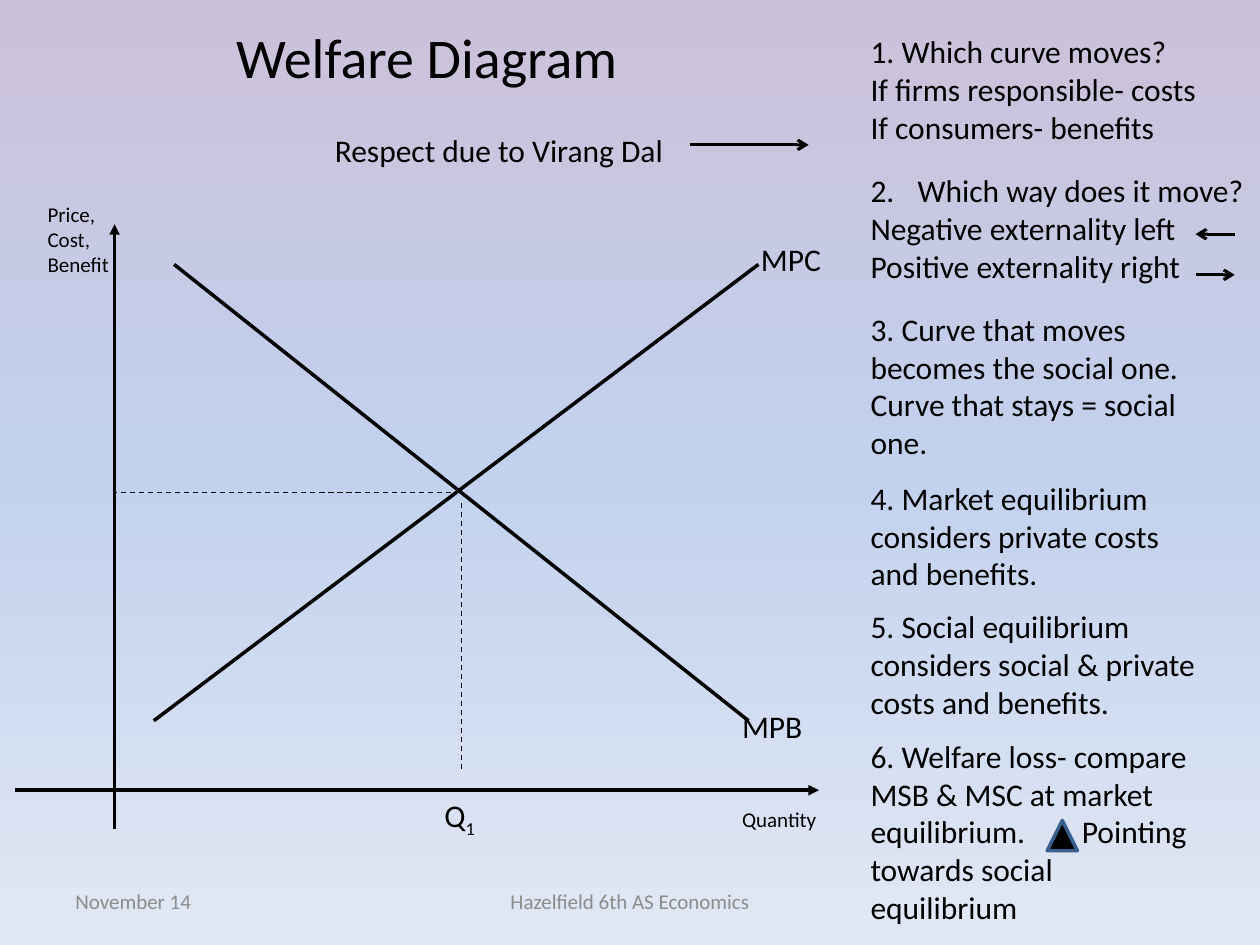
from copy import deepcopy

from lxml import etree
from pptx import Presentation
from pptx import util as u
from pptx.dml.color import RGBColor
from pptx.enum import dml, shapes, text
from pptx.oxml.ns import qn

BLACK, GREY = "000000", "8C8C8C"


def color(value):
    return RGBColor.from_string(value)


def add_text(page, box, lines, size=18, ink=BLACK, align=text.PP_ALIGN.LEFT,
             anchor=text.MSO_ANCHOR.TOP, wrap=True):
    """Put one paragraph per line in a box given in cm; return its frame."""
    frame = page.shapes.add_textbox(*map(u.Cm, box)).text_frame
    frame.word_wrap = wrap
    frame.vertical_anchor = anchor
    for number, line in enumerate(lines):
        para = frame.add_paragraph() if number else frame.paragraphs[0]
        para.alignment = align
        add_span(para, line, size, ink)
    return frame


def add_span(para, words, size=18, ink=BLACK):
    span = para.add_run()
    span.text = words
    span.font.name = "Calibri"
    span.font.size = u.Pt(size)
    span.font.color.rgb = color(ink)
    return span


def add_line(page, origin, start, end, width=2, arrow=None, dashed=False):
    """Draw a straight line between two points relative to origin."""
    points = [u.Cm(origin[axis] + point[axis])
              for point in (start, end) for axis in (0, 1)]
    line = page.shapes.add_connector(shapes.MSO_CONNECTOR.STRAIGHT, *points)
    line.line.width = u.Pt(width)
    line.line.color.rgb = color(BLACK)
    if dashed:
        line.line.dash_style = dml.MSO_LINE.DASH
    if arrow:
        stroke = line.line._get_or_add_ln()
        etree.SubElement(stroke, qn("a:tailEnd"), type=arrow)
    etree.SubElement(line._element.spPr, qn("a:effectLst"))


def paint_background(page):
    fill = page.background.fill
    fill.gradient()
    fill.gradient_angle = 270
    first = next(page._element.iter(qn("a:gs")))
    first.addnext(deepcopy(first))
    stops = ((0, "CCC1DA"), (0.5, "C2D1ED"), (1, "E1E8F5"))
    for stop, (position, tint) in zip(fill.gradient_stops, stops):
        stop.position = position
        stop.color.rgb = color(tint)


def add_header(page, box):
    left, top, width, height = box
    add_text(page, (left, top, 13.41, 1.62), ["Welfare Diagram"], size=32,
             align=text.PP_ALIGN.CENTER)
    add_text(page, (left + 4.6, top + 2.18, 10.31, 1.02),
             ["Respect due to Virang Dal"])
    add_line(page, box, (12, 2.59), (14.4, 2.59), 1.75, "arrow")


def add_diagram(page, box):
    left, top, width, height = box
    axis_x, axis_y = 2.01, 12.03
    upper, lower = 1.43, 10.63

    def label(x, y, w, h, words, **style):
        return add_text(page, (left + x, top + y, w, h), [words], **style)

    # Axes
    add_line(page, box, (axis_x, height), (axis_x, 0.62), arrow="triangle")
    add_line(page, box, (0, axis_y), (width, axis_y), arrow="triangle")
    label(0.41, 0.04, 1.8, 1.8, "Price, Cost, Benefit", size=12)
    label(14.41, 12.23, 2.21, 0.79, "Quantity", size=12)

    # Cost and benefit curves
    add_line(page, box, (14.99, upper), (2.8, lower))
    add_line(page, box, (3.21, upper), (14.79, lower))
    label(14.79, 0.82, 1.73, 1.02, "MPC", wrap=False)
    label(14.41, 10.22, 1.73, 1.02, "MPB", wrap=False)

    # Market equilibrium
    add_line(page, box, (9, 6.23), (9, 11.62), 0.75, dashed=True)
    add_line(page, box, (8.79, 6.03), (axis_x, 6.03), 0.75, dashed=True)
    quantity = label(8.41, axis_y, 1.17, 1.02, "Q", wrap=False)
    subscript = add_span(quantity.paragraphs[0], "1")
    subscript.font._element.set("baseline", "-25000")


def add_steps(page, box):
    left, top, width, height = box
    steps = [
        (0, 2.57, ["1. Which curve moves?", "If firms responsible- costs",
                   "If consumers- benefits"]),
        (2.8, 3.33, ["Which way does it move?", "Negative externality left",
                     "Positive externality right"]),
        (5.59, 3.33, ["3. Curve that moves becomes the social one.",
                      "Curve that stays = social one."]),
        (9, 2.57, ["4. Market equilibrium considers private costs "
                   "and benefits."]),
        (11.59, 2.57, ["5. Social equilibrium considers social & private "
                       "costs and benefits."]),
        (14.2, 4.11, ["6. Welfare loss- compare MSB & MSC at market "
                      "equilibrium.\tPointing towards social equilibrium"]),
    ]
    frames = []
    for number, (y, tall, lines) in enumerate(steps, 1):
        direction = number == 2
        frames.append(add_text(
            page, (left, top + y, 8.13 if direction else width, tall),
            lines, wrap=not direction))

    # Numbered heading with hanging lines below
    indent = u.Cm(0.95)
    for para in frames[1].paragraphs:
        props = para._p.get_or_add_pPr()
        props.set("marL", str(indent))
        props.set("indent", str(-indent))
    heading = frames[1].paragraphs[0]._p.get_or_add_pPr()
    etree.SubElement(heading, qn("a:buFont"), typeface="Calibri")
    etree.SubElement(heading, qn("a:buAutoNum"), type="arabicPeriod", startAt="2")

    # Left and right direction arrows
    add_line(page, box, (7.59, 4.19), (6.8, 4.19), 1.75, "arrow")
    add_line(page, box, (6.8, 5.01), (7.59, 5.01), 1.75, "arrow")

    # Welfare loss triangle in the tabbed gap
    props = frames[-1].paragraphs[0]._p.get_or_add_pPr()
    tabs = etree.SubElement(props, qn("a:tabLst"))
    etree.SubElement(tabs, qn("a:tab"), pos=str(u.Cm(4.26)), algn="l")
    triangle = page.shapes.add_shape(
        shapes.MSO_SHAPE.ISOSCELES_TRIANGLE,
        *map(u.Cm, (left + 3.81, top + 16.01, 0.61, 0.61)))
    triangle.shadow.inherit = False
    triangle.fill.solid()
    triangle.fill.fore_color.rgb = color(BLACK)
    triangle.line.color.rgb = color("3A5F8C")
    triangle.line.width = u.Pt(2)


def add_footer(page, box):
    left, top, width, height = box
    style = dict(size=12, ink=GREY, anchor=text.MSO_ANCHOR.MIDDLE)
    add_text(page, (left, top, 5.93, height), ["November 14"], **style)
    add_text(page, (left + 7.41, top, 8.04, height),
             ["Hazelfield 6th AS Economics"],
             align=text.PP_ALIGN.CENTER, **style)


def main():
    deck = Presentation()
    deck.slide_width, deck.slide_height = u.Cm(25.4), u.Cm(19.05)
    page = deck.slides.add_slide(deck.slide_layouts[6])
    paint_background(page)
    add_footer(page, (1.27, 17.66, 15.45, 1.01))
    add_diagram(page, (0.3, 3.9, 16.21, 12.81))
    add_header(page, (1.9, 0.33, 14.91, 3.2))
    add_steps(page, (17.3, 0.53, 7.19, 18.31))
    deck.save("out.pptx")


if __name__ == "__main__":
    main()
